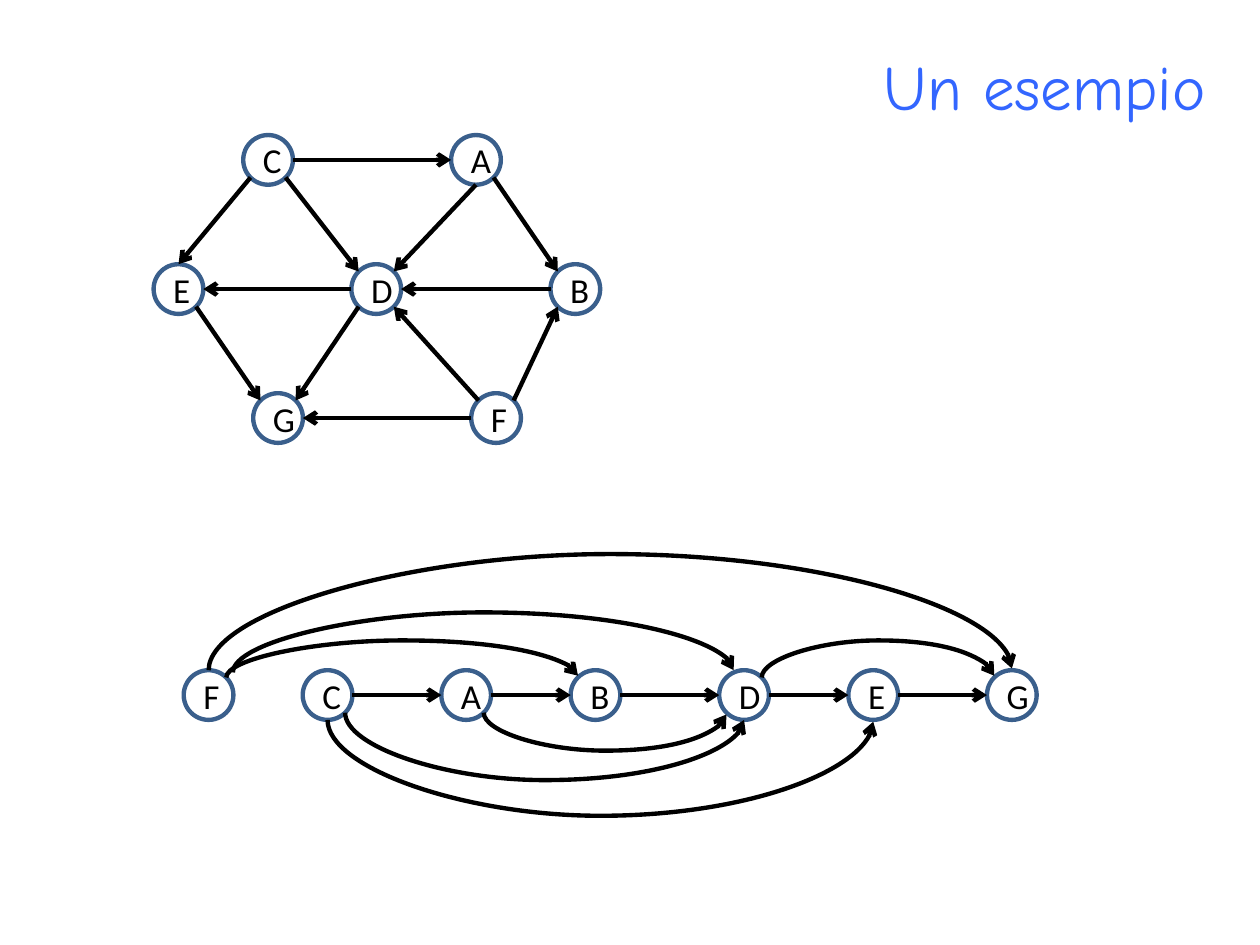
from dataclasses import dataclass
from math import sqrt

from lxml.etree import SubElement
from pptx import Presentation
from pptx.dml.color import RGBColor
from pptx.enum.shapes import MSO_CONNECTOR as Connector, MSO_SHAPE as Shape
from pptx.enum.text import MSO_ANCHOR as Anchor, PP_ALIGN as Align
from pptx.oxml.ns import qn
from pptx.util import Pt

COLORS = {"title": "3366FF", "ring": "3A5F8C", "ink": "000000"}
RADIUS = 14.2
STROKE = 2.5
ROW_Y = 397.2

# Points on a node's ring, in radii from its centre
K = sqrt(0.5)
N, S, W, E = (0, -1), (0, 1), (-1, 0), (1, 0)
NW, NE, SW, SE = (-K, -K), (K, -K), (-K, K), (K, K)


@dataclass(frozen=True)
class Node:
    label: str
    x: float
    y: float

    def at(self, site: tuple) -> tuple:
        return self.x + RADIUS * site[0], self.y + RADIUS * site[1]


@dataclass(frozen=True)
class Edge:
    start: str
    start_site: tuple
    end: str
    end_site: tuple


@dataclass(frozen=True)
class Arc(Edge):
    bend_y: float  # height at which the arc turns


GRAPH = [
    Node("D", 215, 165.2), Node("C", 153.2, 91.4), Node("A", 272, 91.4),
    Node("F", 283.5, 238.9), Node("B", 328.8, 165.2), Node("E", 102, 165.2),
    Node("G", 158.9, 238.9),
]
GRAPH_EDGES = [
    Edge("C", SE, "D", NW), Edge("A", SE, "B", NW), Edge("E", SE, "G", NW),
    Edge("C", E, "A", W), Edge("A", S, "D", NE), Edge("C", SW, "E", N),
    Edge("D", SW, "G", NE), Edge("F", W, "G", E), Edge("B", W, "D", E),
    Edge("F", NW, "D", SE), Edge("F", NE, "B", SW), Edge("D", W, "E", E),
]

ORDER_X = {"F": 119.2, "C": 187.2, "A": 266.4, "B": 340.3,
           "D": 425.2, "E": 499, "G": 578.2}
ORDER = [Node(label, x, ROW_Y) for label, x in ORDER_X.items()]
CHAIN = "CABDEG"
ORDER_EDGES = [Edge(a, E, b, W) for a, b in zip(CHAIN, CHAIN[1:])]
ARCS = [
    Arc("F", NE, "B", NW, 365.8),
    Arc("F", (0.98, -0.91), "D", (-0.42, -1), 349.9),
    Arc("F", N, "G", N, 316.1),
    Arc("A", SE, "D", SW, 429.1),
    Arc("C", SE, "D", S, 445.7),
    Arc("C", S, "E", S, 466.6),
    Arc("D", NE, "G", NW, 365.8),
]


def color(name: str) -> RGBColor:
    return RGBColor.from_string(COLORS[name])


def format_run(r, font: str, size: float, color_name: str) -> None:
    r.font.name = font
    r.font.size = Pt(size)
    r.font.color.rgb = color(color_name)


def draw_title(s, text: str) -> None:
    sp = s.shapes.title
    sp.left, sp.top, sp.width, sp.height = Pt(48), Pt(3.6), Pt(648), Pt(90)
    tf = sp.text_frame
    tf.text = text
    tf.vertical_anchor = Anchor.MIDDLE
    p = tf.paragraphs[0]
    p.alignment = Align.RIGHT
    format_run(p.runs[0], "Comic Neue", 36, "title")


def draw_node(s, node: Node) -> None:
    left, top = node.x - RADIUS, node.y - RADIUS
    sp = s.shapes.add_shape(Shape.OVAL, Pt(left), Pt(top),
                            Pt(2 * RADIUS), Pt(2 * RADIUS))
    sp.shadow.inherit = False
    sp.fill.background()
    sp.line.color.rgb = color("ring")
    sp.line.width = Pt(STROKE)
    tf = sp.text_frame
    tf.text = node.label
    tf.vertical_anchor = Anchor.MIDDLE
    p = tf.paragraphs[0]
    p.alignment = Align.CENTER
    format_run(p.runs[0], "Calibri", 20, "ink")


def add_arrow(s, kind, x1: float, y1: float, x2: float, y2: float):
    line = s.shapes.add_connector(kind, Pt(x1), Pt(y1), Pt(x2), Pt(y2))
    line.line.color.rgb = color("ink")
    line.line.width = Pt(STROKE)
    SubElement(line.line._get_or_add_ln(), qn("a:tailEnd"), type="arrow")
    SubElement(line._element.spPr, qn("a:effectLst"))
    return line


def draw_edge(s, nodes: dict, edge: Edge) -> None:
    start = nodes[edge.start].at(edge.start_site)
    end = nodes[edge.end].at(edge.end_site)
    add_arrow(s, Connector.STRAIGHT, *start, *end)


def draw_arc(s, nodes: dict, arc: Arc) -> None:
    """Draw a curved connector turned a quarter, so it leaves vertically."""
    x1, y1 = nodes[arc.start].at(arc.start_site)
    x2, y2 = nodes[arc.end].at(arc.end_site)
    above = arc.bend_y < y1
    # The bend is a multiple of the end offset, which must not be zero
    offset = max(abs(y2 - y1), 1)
    side = -1 if above else 1
    cx, cy = (x1 + x2) / 2, y1 + side * offset / 2
    half_w, half_h = offset / 2, side * (x2 - x1) / 2
    line = add_arrow(s, Connector.CURVE, cx + half_w, cy - half_h,
                     cx - half_w, cy + half_h)
    spPr = line._element.spPr
    spPr.find(qn("a:xfrm")).set("rot", str((90 if above else 270) * 60000))
    geom = spPr.find(qn("a:prstGeom"))
    guides = geom.find(qn("a:avLst"))
    if guides is None:
        guides = SubElement(geom, qn("a:avLst"))
    bend = round(abs(arc.bend_y - y1) / offset * 100000)
    SubElement(guides, qn("a:gd"), name="adj1", fmla=f"val {bend}")


def draw_graph(s, nodes: list[Node], edges: list[Edge], arcs: list[Arc]) -> None:
    by_label = {node.label: node for node in nodes}
    for node in nodes:
        draw_node(s, node)
    for edge in edges:
        draw_edge(s, by_label, edge)
    for arc in arcs:
        draw_arc(s, by_label, arc)


def main() -> None:
    prs = Presentation()
    prs.slide_width, prs.slide_height = Pt(720), Pt(540)
    s = prs.slides.add_slide(prs.slide_layouts[5])
    draw_title(s, "Un esempio")
    draw_graph(s, GRAPH, GRAPH_EDGES, [])
    draw_graph(s, ORDER, ORDER_EDGES, ARCS)
    prs.save("out.pptx")


if __name__ == "__main__":
    main()
